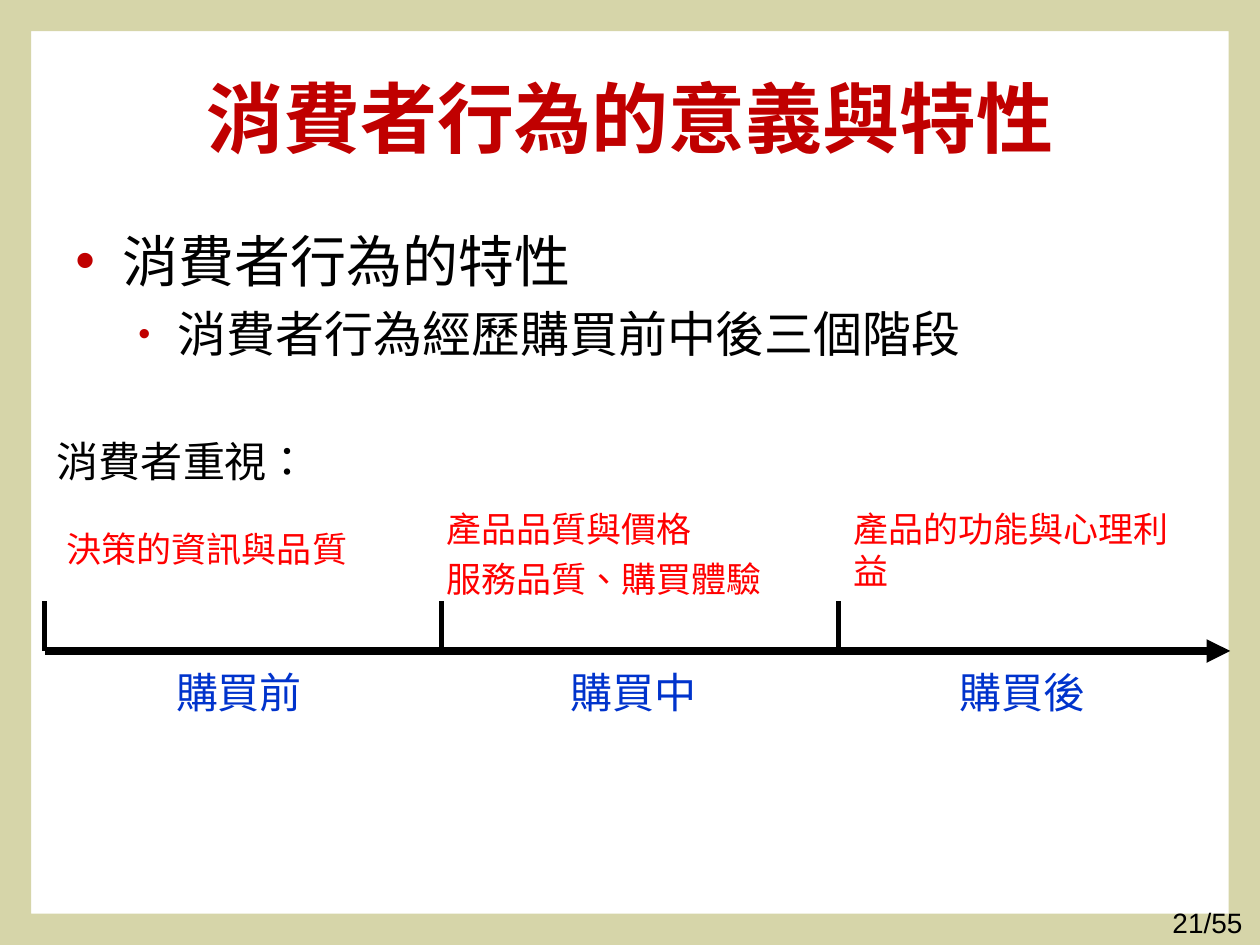
from lxml.etree import SubElement
from pptx import Presentation
from pptx.dml.color import RGBColor as Color
from pptx.enum.lang import MSO_LANGUAGE_ID as Language
from pptx.enum.shapes import MSO_CONNECTOR as Connector, MSO_SHAPE as Shape
from pptx.enum.text import MSO_ANCHOR as Anchor, PP_ALIGN as Align
from pptx.oxml.ns import qn
from pptx.util import Pt

THEME = {
    "frame": "D6D5A9", "title": "C00000", "text": "000000",
    "stage": "0033CC", "concern": "FF0000",
    "title_size": 44, "body_size": 32, "sub_size": 28,
    "label_size": 24, "concern_size": 20, "page_size": 16,
    "latin": "Arial", "cjk": "Noto Sans CJK TC",
}

TITLE = "消費者行為的意義與特性"
BULLETS = [
    {"text": "消費者行為的特性", "size": "body_size", "indent": 27, "hang": 27, "before": 0, "percent": 100},
    {"text": "消費者行為經歷購買前中後三個階段", "size": "sub_size", "indent": 58.5, "hang": 22.5,
     "before": 5.6, "percent": 70},
]
HEADING = "消費者重視："
PAGE = "21/55"
STAGES = [
    {"name": "購買前", "name_left": 93.5, "concerns": ["決策的資訊與品質"],
     "box": (31, 298, 184, 31), "spacing": 1},
    {"name": "購買中", "name_left": 319, "concerns": ["產品品質與價格", "服務品質、購買體驗"],
     "box": (248, 281.5, 204, 65), "spacing": 1.2},
    {"name": "購買後", "name_left": 541, "concerns": ["產品的功能與心理利益"],
     "box": (480.5, 298.5, 208, 31), "spacing": 1},
]
AXIS_LEFT, AXIS_RIGHT, AXIS_TOP = 25.5, 703, 372
STAGE_STEP, TICK_HEIGHT = 226.8, 28.5


def color(name):
    return Color.from_string(THEME[name])


def place(shape, left, top, width, height):
    shape.left, shape.top, shape.width, shape.height = map(Pt, (left, top, width, height))


def add_run(paragraph, text, size, ink, face="latin", bold=False):
    run = paragraph.add_run()
    run.text = text
    font = run.font
    font.size, font.bold, font.name = Pt(THEME[size]), bold, THEME[face]
    font.language_id = Language.TAIWAN if hasattr(Language, "TAIWAN") else Language.TRADITIONAL_CHINESE
    font.color.rgb = color(ink)
    SubElement(run._r.get_or_add_rPr(), qn("a:ea"), typeface=THEME["cjk"])


def add_text(slide, box, lines, size, ink, anchor=Anchor.TOP, align=Align.LEFT, spacing=None):
    frame = slide.shapes.add_textbox(*map(Pt, box)).text_frame
    frame.word_wrap, frame.vertical_anchor = True, anchor
    for index, line in enumerate(lines):
        paragraph = frame.add_paragraph() if index else frame.paragraphs[0]
        paragraph.alignment = align
        if spacing:
            paragraph.line_spacing = spacing
        add_run(paragraph, line, size, ink)


def add_bullets(slide):
    frame = slide.shapes.add_textbox(Pt(36), Pt(126), Pt(648), Pt(356.5)).text_frame
    frame.word_wrap = True
    for index, item in enumerate(BULLETS):
        paragraph = frame.add_paragraph() if index else frame.paragraphs[0]
        paragraph.level = index
        properties = paragraph._p.get_or_add_pPr()
        properties.set("marL", str(Pt(item["indent"])))
        properties.set("indent", str(-Pt(item["hang"])))
        bullet_color = SubElement(properties, qn("a:buClr"))
        SubElement(bullet_color, qn("a:srgbClr"), val=THEME["title"])
        SubElement(properties, qn("a:buSzPct"), val=str(item["percent"] * 1000))
        SubElement(properties, qn("a:buFont"), typeface=THEME["latin"])
        SubElement(properties, qn("a:buChar"), char="•")
        paragraph.space_before = Pt(item["before"])
        add_run(paragraph, item["text"], item["size"], "text", "cjk")


def add_line(slide, start, end, width, arrow=False):
    line = slide.shapes.add_connector(Connector.STRAIGHT, *map(Pt, start + end))
    line.line.width = Pt(width)
    line.line.color.rgb = color("text")
    if arrow:
        SubElement(line.line._get_or_add_ln(), qn("a:tailEnd"), type="triangle")
    SubElement(line._element.spPr, qn("a:effectLst"))


def add_timeline(slide):
    add_line(slide, (AXIS_LEFT, AXIS_TOP), (AXIS_RIGHT, AXIS_TOP), 4.5, arrow=True)
    for index, stage in enumerate(STAGES):
        left = AXIS_LEFT + index * STAGE_STEP
        add_line(slide, (left, AXIS_TOP - TICK_HEIGHT), (left, AXIS_TOP), 3)
        add_text(slide, (stage["name_left"], 377.5, 90, 36), [stage["name"]], "label_size", "stage")
        add_text(slide, stage["box"], stage["concerns"], "concern_size", "concern",
                 anchor=Anchor.MIDDLE, spacing=stage["spacing"])


def main():
    presentation = Presentation()
    presentation.slide_width, presentation.slide_height = Pt(720), Pt(540)
    slide = presentation.slides.add_slide(presentation.slide_layouts[5])

    border = slide.shapes.add_shape(Shape.FRAME, 0, 0, Pt(720), Pt(540))
    border.adjustments[0] = 0.033
    border.shadow.inherit = False
    border.fill.solid()
    border.fill.fore_color.rgb = color("frame")
    border.line.fill.background()

    title = slide.shapes.title
    place(title, 36, 21.6, 648, 90)
    title.text_frame.vertical_anchor = Anchor.MIDDLE
    paragraph = title.text_frame.paragraphs[0]
    paragraph.alignment = Align.CENTER
    add_run(paragraph, TITLE, "title_size", "title", "cjk", bold=True)

    add_bullets(slide)
    add_text(slide, (25.5, 245.5, 166, 36), [HEADING], "label_size", "text")
    add_timeline(slide)
    add_text(slide, (549.5, 514, 167.5, 26), [PAGE], "page_size", "text", align=Align.RIGHT)
    presentation.save("out.pptx")


if __name__ == "__main__":
    main()
